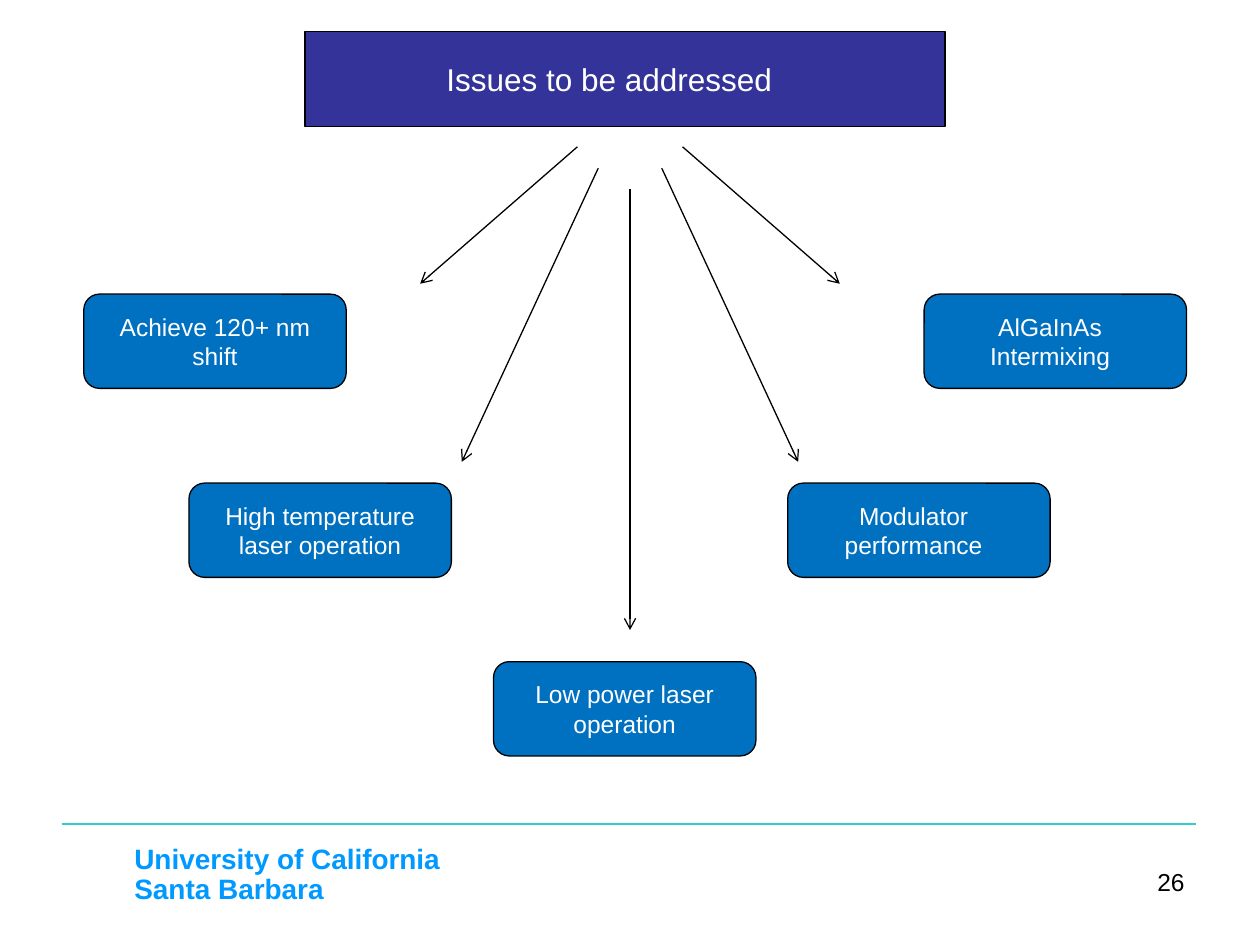
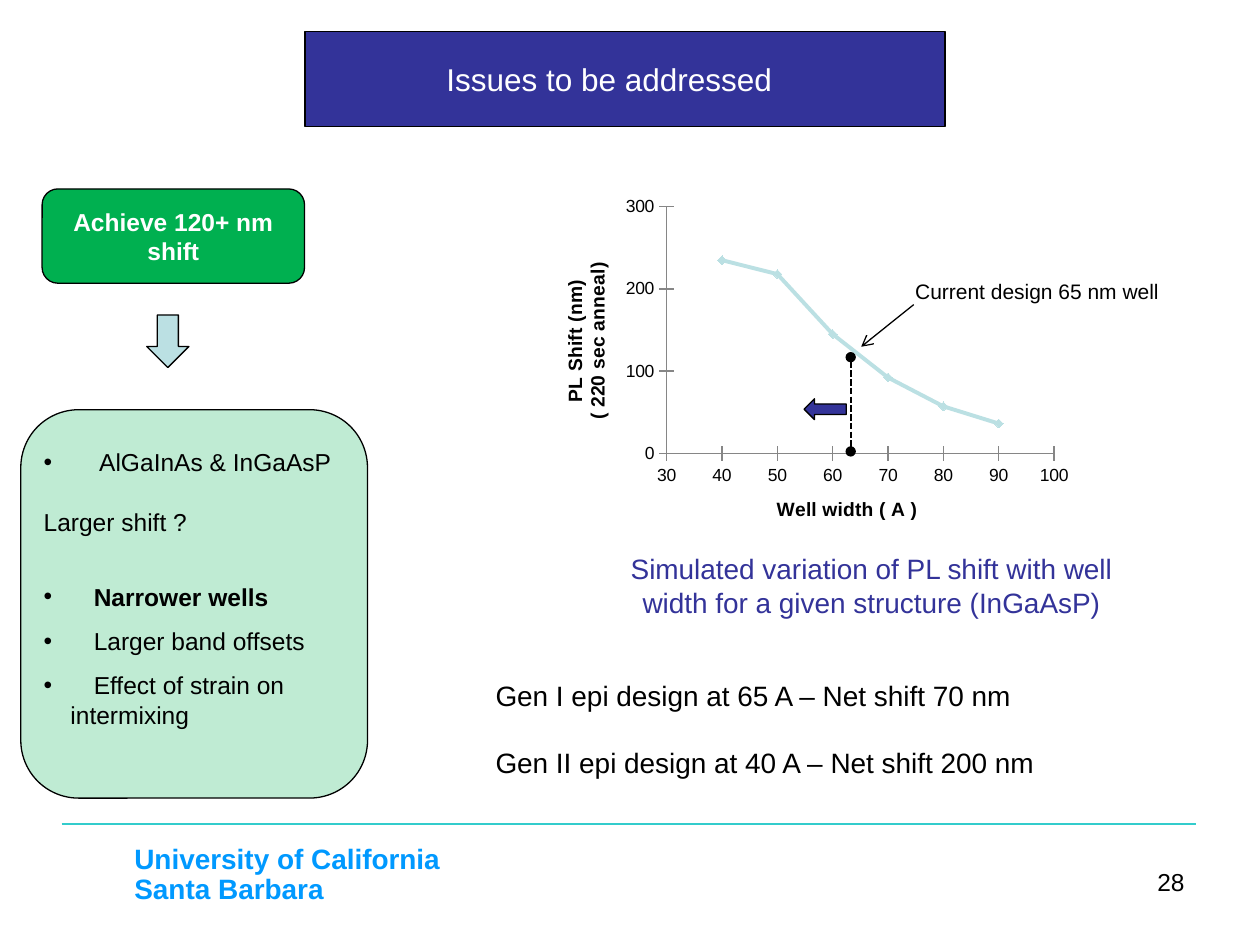
from lxml import etree
from pptx import Presentation, util as u
from pptx.chart.data import XyChartData
from pptx.dml.color import RGBColor
from pptx.enum import chart as ch, dml, shapes, text
from pptx.oxml.ns import qn

FONT = "Arial"
COLORS = {
    "ink": "000000", "white": "FFFFFF", "navy": "333399", "blue": "0070C0",
    "green": "00B050", "ice": "BBE0E3", "rule": "33CCCC",
    "campus": "0099FF", "axis": "868686",
}
TITLE = "Issues to be addressed"
CAMPUS = ["University of California", "Santa Barbara"]
ISSUE_SIZE = (5.29, 1.9)
CENTER_X = 12.7


def rgb(name):
    return RGBColor.from_string(COLORS[name])


def sub(parent, tag, **attributes):
    return etree.SubElement(parent, qn(tag), attributes)


class Deck:
    """Holds the style and the slide being built; lengths are in cm."""

    def __init__(self):
        self.prs = Presentation()
        self.prs.slide_width, self.prs.slide_height = u.Cm(25.4), u.Cm(19.05)
        self.slide = None

    def add_slide(self, layout, number):
        self.slide = self.prs.slides.add_slide(self.prs.slide_layouts[layout])
        title = self.slide.shapes.title
        self.panel(title, (6.15, 0.64, 12.9, 1.91), "navy")
        frame = title.text_frame
        frame.margin_right = u.Cm(0.89)
        self.fill_text(frame, [TITLE], 18, "white", align=text.PP_ALIGN.CENTER)
        self.line((1.24, 16.61), (24.1, 16.61), "rule", 1.5)
        self.label((2.46, 16.92, 6.71, 1.47), CAMPUS, 16, "campus", bold=True,
                   spacing=0.9, wrap=False)
        self.label((18.21, 17.35, 5.92, 1.32), [str(number)], 14,
                   align=text.PP_ALIGN.RIGHT)

    def place(self, shape, box):
        shape.left, shape.top, shape.width, shape.height = map(u.Cm, box)

    def paint(self, shape, fill):
        shape.fill.solid()
        shape.fill.fore_color.rgb = rgb(fill)
        shape.line.color.rgb = rgb("ink")
        shape.line.width = u.Pt(0.75)

    def panel(self, placeholder, box, fill, opacity=100):
        """Turn a placeholder into an outlined rounded box."""
        self.place(placeholder, box)
        properties = placeholder._element.spPr
        sub(sub(properties, "a:prstGeom", prst="roundRect"), "a:avLst")
        self.paint(placeholder, fill)
        if opacity < 100:
            color = properties.find(qn("a:solidFill")).find(qn("a:srgbClr"))
            sub(color, "a:alpha", val=str(opacity * 1000))
        placeholder.text_frame.auto_size = text.MSO_AUTO_SIZE.NONE

    def run(self, paragraph, words, size, color="ink", bold=False):
        run = paragraph.add_run()
        run.text = words
        font = run.font
        font.name, font.size, font.bold = FONT, u.Pt(size), bold
        font.color.rgb = rgb(color)

    def fill_text(self, frame, lines, size, color="ink", bold=False,
                  align=text.PP_ALIGN.LEFT, spacing=1.0, gap=0):
        for i, words in enumerate(lines):
            paragraph = frame.add_paragraph() if i else frame.paragraphs[0]
            paragraph.alignment = align
            paragraph.line_spacing = spacing
            paragraph.space_before = u.Pt(gap if i else 0)
            self.run(paragraph, words, size, color, bold)

    def label(self, box, lines, size, color="ink", wrap=True, **style):
        frame = self.slide.shapes.add_textbox(*map(u.Cm, box)).text_frame
        frame.word_wrap = wrap
        self.fill_text(frame, lines, size, color, **style)

    def shape(self, kind, box, fill):
        shape = self.slide.shapes.add_shape(kind, *map(u.Cm, box))
        shape.shadow.inherit = False
        self.paint(shape, fill)
        return shape

    def issue(self, corner, words, fill="blue", bold=False, right_inset=0.25):
        box = self.shape(shapes.MSO_SHAPE.ROUNDED_RECTANGLE, corner + ISSUE_SIZE, fill)
        frame = box.text_frame
        frame.word_wrap = True
        frame.vertical_anchor = text.MSO_ANCHOR.MIDDLE
        frame.margin_right = u.Cm(right_inset)
        self.fill_text(frame, [words], 14, "white", bold, text.PP_ALIGN.CENTER)

    def line(self, start, end, color="ink", width=0.75, head=None, tail=None, dash=None):
        connector = self.slide.shapes.add_connector(
            shapes.MSO_CONNECTOR.STRAIGHT, *map(u.Cm, start + end))
        connector.line.color.rgb = rgb(color)
        connector.line.width = u.Pt(width)
        if dash:
            connector.line.dash_style = dash
        properties = connector._element.spPr
        stroke = properties.find(qn("a:ln"))
        for tag, tip in (("a:headEnd", head), ("a:tailEnd", tail)):
            if tip:
                sub(stroke, tag, type=tip)
        sub(properties, "a:effectLst")

    def bullets(self, box, items):
        """Fill the body; items are (words, bulleted, indent, space before, bold)."""
        body = self.slide.placeholders[1]
        self.panel(body, box, "green", opacity=25)
        frame = body.text_frame
        frame.vertical_anchor = text.MSO_ANCHOR.TOP
        frame.margin_left, frame.margin_top, frame.margin_right = map(u.Cm, (0.12, 0.42, 0.1))
        for i, (words, bulleted, indent, before, bold) in enumerate(items):
            paragraph = frame.add_paragraph() if i else frame.paragraphs[0]
            paragraph.line_spacing = 1.0
            paragraph.space_before = u.Pt(before)
            properties = paragraph._p.get_or_add_pPr()
            properties.set("marL", str(u.Cm(indent)))
            properties.set("indent", str(-u.Cm(indent) if bulleted else 0))
            if bulleted:
                sub(properties, "a:buFont", typeface=FONT)
                sub(properties, "a:buChar", char="•")
            else:
                sub(properties, "a:buNone")
            self.run(paragraph, words, 14, bold=bold)

    def axis(self, axis, title, low, high, step):
        axis.minimum_scale, axis.maximum_scale, axis.major_unit = low, high, step
        axis.has_major_gridlines = False
        axis.major_tick_mark = ch.XL_TICK_MARK.CROSS
        axis.tick_labels.number_format = "0"
        axis.tick_labels.number_format_is_linked = False
        axis.format.line.color.rgb = rgb("axis")
        self.fill_text(axis.axis_title.text_frame, title, 11, bold=True,
                       align=text.PP_ALIGN.CENTER)

    def curve(self, box, points, x_axis, y_axis, plot_area):
        data = XyChartData()
        shift = data.add_series("Series 1")
        for point in points:
            shift.add_data_point(*point)
        chart = self.slide.shapes.add_chart(
            ch.XL_CHART_TYPE.XY_SCATTER_SMOOTH, *map(u.Cm, box), data).chart
        chart.has_legend = chart.has_title = False
        chart.font.name, chart.font.size = FONT, u.Pt(10)
        chart.font.color.rgb = rgb("ink")
        plot = chart.plots[0]
        plot.vary_by_categories = False
        series = plot.series[0]
        series.smooth = True
        series.format.line.color.rgb = rgb("ice")
        series.format.line.width = u.Pt(2.25)
        series.marker.style = ch.XL_MARKER_STYLE.DIAMOND
        series.marker.size = 5
        series.marker.format.fill.solid()
        series.marker.format.fill.fore_color.rgb = rgb("ice")
        series.marker.format.line.color.rgb = rgb("ice")
        self.axis(chart.category_axis, *x_axis)
        self.axis(chart.value_axis, *y_axis)
        area = chart._chartSpace.chart.plotArea
        for old in area.findall(qn("c:layout")):
            area.remove(old)
        layout = etree.Element(qn("c:layout"))
        area.insert(0, layout)
        manual = sub(layout, "c:manualLayout")
        sub(manual, "c:layoutTarget", val="inner")
        for mode in ("xMode", "yMode"):
            sub(manual, "c:" + mode, val="edge")
        for side, share in zip("xywh", plot_area):
            sub(manual, "c:" + side, val=str(share))


def issues_overview(deck):
    deck.add_slide(5, 26)
    deck.issue((1.69, 5.93), "Achieve 120+ nm shift")
    deck.issue((3.81, 9.74), "High temperature laser operation")
    deck.issue((15.88, 9.74), "Modulator performance", right_inset=0.46)
    deck.issue((9.95, 13.34), "Low power laser operation")
    deck.issue((18.63, 5.93), "AlGaInAs Intermixing", right_inset=0.46)
    deck.line((CENTER_X, 3.81), (CENTER_X, 12.7), tail="arrow")
    for side in (-1, 1):
        for near, top, far, bottom in ((1.06, 2.96, 4.23, 5.72), (0.64, 3.39, 3.39, 9.31)):
            deck.line((CENTER_X + side * near, top), (CENTER_X + side * far, bottom),
                      tail="arrow")


def shift_details(deck):
    deck.add_slide(1, 28)
    deck.bullets((0.42, 8.26, 6.99, 7.83), [
        ("AlGaInAs & InGaAsP", True, 1.12, 0, False),
        ("Larger shift ?", False, 0, 17, False),
        ("Narrower wells", True, 1.01, 26, True),
        ("Larger band offsets", True, 1.01, 8.5, False),
        ("Effect of strain on", True, 1.01, 8.5, False),
        ("intermixing", False, 0.54, 0, False),
    ])
    deck.issue((0.85, 3.81), "Achieve 120+ nm shift", "green", bold=True)
    deck.shape(shapes.MSO_SHAPE.DOWN_ARROW, (2.96, 6.35, 0.85, 1.06), "ice")
    deck.curve((10.8, 3.81, 11, 7.2),
               [(40, 235), (50, 218), (60, 145), (70, 92), (80, 57), (90, 36)],
               (["Well width ( A )"], 30, 100, 10),
               (["PL Shift (nm)", "( 220 sec anneal)"], 0, 300, 100),
               (0.24, 0.05, 0.71, 0.69))
    deck.line((17.15, 7.2), (17.15, 9.1), width=1.25, head="oval", tail="oval",
              dash=dml.MSO_LINE.SQUARE_DOT)
    deck.shape(shapes.MSO_SHAPE.LEFT_ARROW, (16.21, 8.04, 0.85, 0.42), "navy")
    deck.label((12.07, 11, 11, 1.63),
               ["Simulated variation of PL shift with well width for a given structure (InGaAsP)"],
               16, "navy", align=text.PP_ALIGN.CENTER)
    deck.label((18.2, 5.5, 5.5, 0.77), ["Current design 65 nm well"], 12)
    deck.line((18.42, 6.14), (17.36, 6.99), tail="arrow")
    deck.label((9.74, 13.55, 15.66, 2.31),
               ["Gen I epi design at 65 A – Net shift 70 nm",
                "Gen II epi design at 40 A – Net shift 200 nm"], 16, gap=19)


def main():
    deck = Deck()
    issues_overview(deck)
    shift_details(deck)
    deck.prs.save("out.pptx")


if __name__ == "__main__":
    main()
